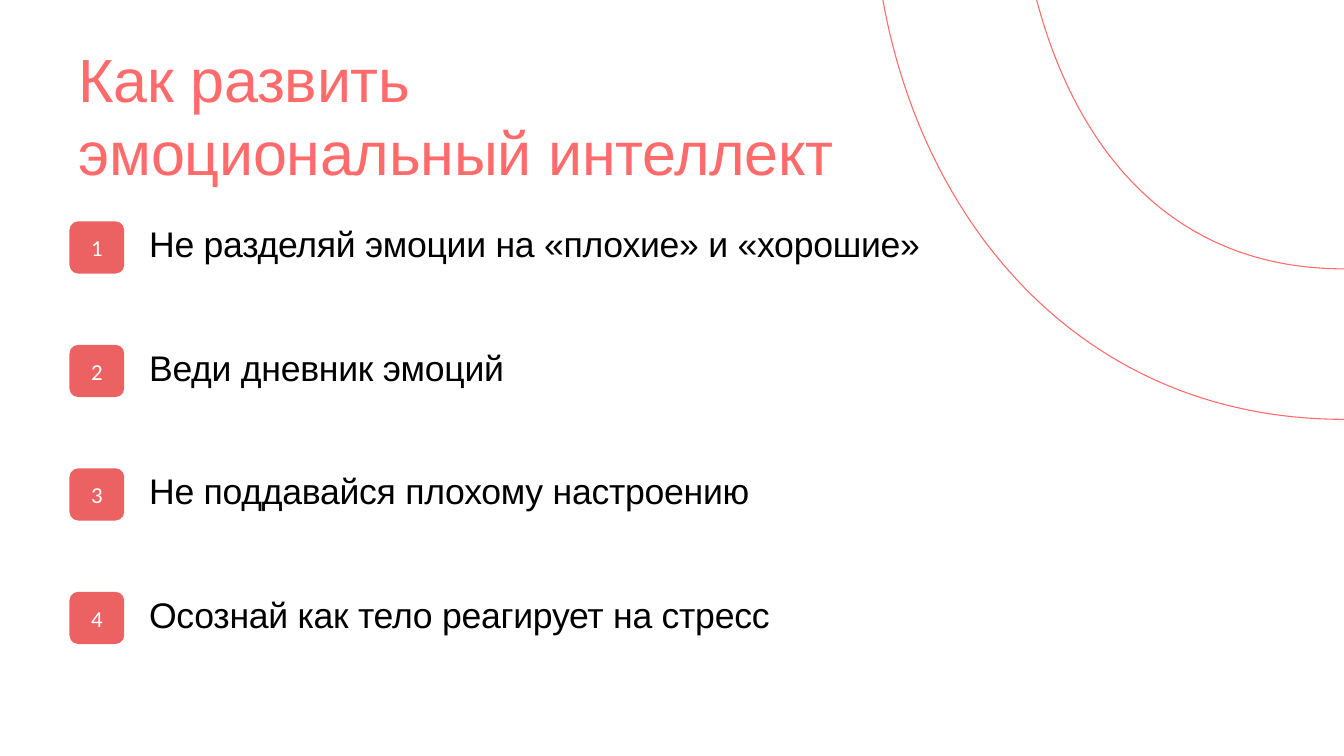
from dataclasses import dataclass

from pptx import Presentation
from pptx.dml.color import RGBColor
from pptx.enum.shapes import MSO_SHAPE
from pptx.enum.text import MSO_ANCHOR, PP_ALIGN
from pptx.util import Cm, Pt


@dataclass(frozen=True)
class Theme:
    coral: RGBColor = RGBColor(0xFF, 0x6B, 0x6B)
    badge: RGBColor = RGBColor(0xEC, 0x62, 0x62)
    ink: RGBColor = RGBColor(0, 0, 0)
    paper: RGBColor = RGBColor(0xFF, 0xFF, 0xFF)
    text_font: str = "Arial"
    number_font: str = "Calibri"
    title_size: Pt = Pt(48)
    item_size: Pt = Pt(28)
    number_size: Pt = Pt(18)
    arc_width: Pt = Pt(0.85)


THEME = Theme()
TITLE_LINES = ["Как развить", "эмоциональный интеллект"]
STEPS = [
    "Не разделяй эмоции на «плохие» и «хорошие»",
    "Веди дневник эмоций",
    "Не поддавайся плохому настроению",
    "Осознай как тело реагирует на стресс",
]
# Control points of the two arcs, in cm from the corner of their box
ARCS = [
    [(4.27, 0), (5.34, 4.06), (7.95, 7.47), (12.8, 7.47)],
    [(0, 0), (1.14, 6.35), (5.64, 11.65), (12.8, 11.65)],
]
ARC_STEPS = 60


def set_all(target, values):
    for name, value in values.items():
        setattr(target, name, value)


def write(box, lines, font, para_format, tracking=None):
    """Fill a shape with paragraphs that share one format."""
    frame = box.text_frame
    for index, line in enumerate(lines):
        para = frame.add_paragraph() if index else frame.paragraphs[0]
        set_all(para, para_format)
        span = para.add_run()
        span.text = line
        set_all(span.font, {key: font[key] for key in ("name", "size")})
        span.font.color.rgb = font["color"]
        if tracking is not None:
            span._r.get_or_add_rPr().set("spc", str(tracking))


def add_text(page, left, top, width, height, anchor):
    box = page.shapes.add_textbox(Cm(left), Cm(top), Cm(width), Cm(height))
    set_all(box.text_frame, {"word_wrap": True, "vertical_anchor": anchor})
    return box


def curve_point(controls, t):
    """Point of a cubic curve at t between 0 and 1."""
    weights = ((1 - t) ** 3, 3 * t * (1 - t) ** 2, 3 * t * t * (1 - t), t ** 3)
    return tuple(sum(w * point[axis] for w, point in zip(weights, controls))
                 for axis in (0, 1))


def draw_arcs(page, left, top):
    builder = None
    for controls in ARCS:
        points = [tuple(Cm(part) for part in curve_point(controls, i / ARC_STEPS))
                  for i in range(ARC_STEPS + 1)]
        if builder is None:
            builder = page.shapes.build_freeform(*points[0])
        else:
            builder.move_to(*points[0])
        builder.add_line_segments(points[1:], close=False)
    arcs = builder.convert_to_shape(Cm(left), Cm(top))
    arcs.shadow.inherit = False
    arcs.fill.background()
    arcs.line.color.rgb = THEME.coral
    arcs.line.width = THEME.arc_width


def draw_title(page, left, top, width, height):
    box = add_text(page, left, top, width, height, MSO_ANCHOR.TOP)
    font = {"name": THEME.text_font, "size": THEME.title_size, "color": THEME.coral}
    write(box, TITLE_LINES, font, {"alignment": PP_ALIGN.LEFT}, tracking=-20)


def draw_step(page, number, text, left, top, width, height):
    # Numbered badge
    badge_width, gap, text_height = 1.52, 0.44, 1.27
    badge = page.shapes.add_shape(MSO_SHAPE.ROUNDED_RECTANGLE, Cm(left), Cm(top),
                                  Cm(badge_width), Cm(height))
    badge.shadow.inherit = False
    badge.fill.solid()
    badge.fill.fore_color.rgb = THEME.badge
    badge.line.fill.background()
    badge.text_frame.vertical_anchor = MSO_ANCHOR.MIDDLE
    font = {"name": THEME.number_font, "size": THEME.number_size, "color": THEME.paper}
    write(badge, [str(number)], font, {"alignment": PP_ALIGN.CENTER})

    # Advice beside the badge
    indent = badge_width + gap
    box = add_text(page, left + indent, top + (height - text_height) / 2,
                   width - indent, text_height, MSO_ANCHOR.MIDDLE)
    font = {"name": THEME.text_font, "size": THEME.item_size, "color": THEME.ink}
    write(box, [text], font, {"line_spacing": 0.8, "space_before": Pt(10)}, tracking=-20)


def draw_steps(page, left, top, width, pitch):
    for index, text in enumerate(STEPS):
        draw_step(page, index + 1, text, left, top + index * pitch, width, 1.45)


def main():
    deck = Presentation()
    deck.slide_width = Cm(37.31)
    deck.slide_height = Cm(21)
    page = deck.slides.add_slide(deck.slide_layouts[6])
    page.background.fill.solid()
    page.background.fill.fore_color.rgb = THEME.paper
    margin, content_width = 1.93, 30
    draw_arcs(page, 24.51, 0)
    draw_title(page, margin, 1.02, content_width, 2.31)
    draw_steps(page, margin, 6.15, content_width, 3.43)
    deck.save("out.pptx")


if __name__ == "__main__":
    main()
